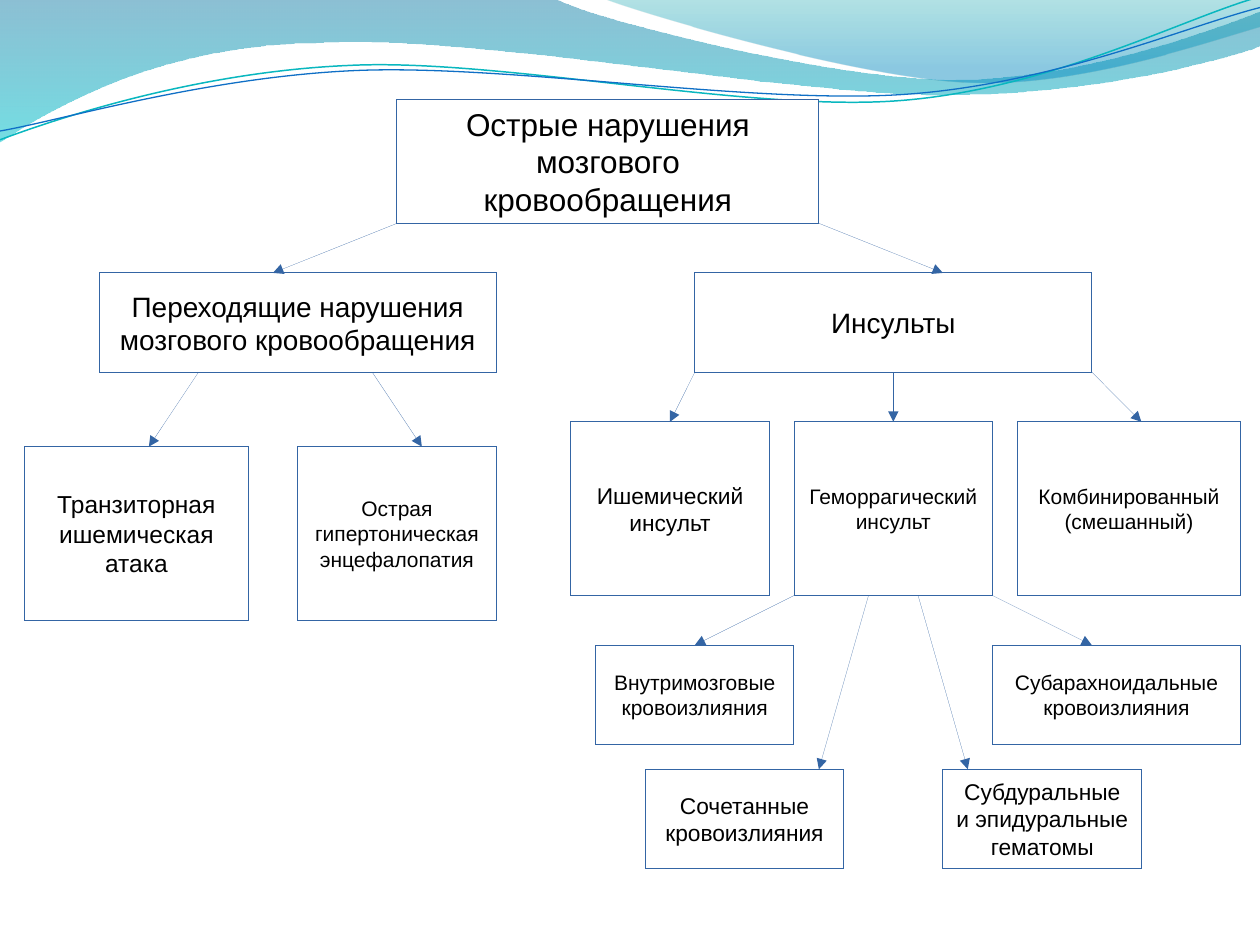
"""Build a slide with a tree chart of acute disorders of cerebral circulation."""
from lxml.etree import SubElement
from pptx import Presentation
from pptx.dml.color import RGBColor
from pptx.enum.shapes import MSO_CONNECTOR, MSO_SHAPE
from pptx.enum.text import MSO_ANCHOR, PP_ALIGN
from pptx.oxml.ns import qn
from pptx.util import Pt

WHITE = RGBColor(0xFF, 0xFF, 0xFF)
BLACK = RGBColor(0x00, 0x00, 0x00)
EDGE = RGBColor(0x34, 0x65, 0xA4)
TEAL_LINE = RGBColor(0x09, 0xB7, 0xBF)
BLUE_LINE = RGBColor(0x0F, 0x6F, 0xC6)
DEEP_BLUE = RGBColor(0x00, 0x74, 0xA0)
CYAN = RGBColor(0x00, 0xC4, 0xCD)
SKY = RGBColor(0x00, 0x8A, 0xBF)
TEAL = RGBColor(0x00, 0xA0, 0xA8)

INCH = 72
GRID = 14.18

BOXES = {
    "root": ("Острые нарушения мозгового кровообращения", 18, 16, 4, 17, 5),
    "transient": ("Переходящие нарушения мозгового кровообращения", 16, 4, 11, 16, 4),
    "tia": ("Транзиторная ишемическая атака", 14, 1, 18, 9, 7),
    "strokes": ("Инсульты", 16, 28, 11, 16, 4),
    "enceph": ("Острая гипертоническая энцефалопатия", 12, 12, 18, 8, 7),
    "hemorrhagic": ("Геморрагический инсульт", 12, 32, 17, 8, 7),
    "combined": ("Комбинированный (смешанный)", 12, 41, 17, 9, 7),
    "ischemic": ("Ишемический инсульт", 13, 23, 17, 8, 7),
    "intracerebral": ("Внутримозговые кровоизлияния", 12, 24, 26, 8, 4),
    "mixed": ("Сочетанные кровоизлияния", 13, 26, 31, 8, 4),
    "subarachnoid": ("Субарахноидальные кровоизлияния", 12, 40, 26, 10, 4),
    "subdural": ("Субдуральные и эпидуральные гематомы", 13, 38, 31, 8, 4),
}
ARROWS = [
    ("root", 16, "transient", 11), ("root", 33, "strokes", 38),
    ("transient", 8, "tia", 6), ("transient", 15, "enceph", 17),
    ("strokes", 28, "ischemic", 27), ("strokes", 36, "hemorrhagic", 36),
    ("strokes", 44, "combined", 46), ("hemorrhagic", 32, "intracerebral", 28),
    ("hemorrhagic", 35, "mixed", 33), ("hemorrhagic", 40, "subarachnoid", 44),
    ("hemorrhagic", 37, "subdural", 39),
]
BANDS = [
    ([(0, 0), (4.4, -0.01), (4.76, 0.17, 6.64, 0.63, 7.58, 0.63),
      (8.53, 0.63, 9.58, 0.26, 10, 0.09), (10.01, 0.36),
      (9.83, 0.44, 8.7, 0.76, 7.46, 0.75), (6.22, 0.75, 3.82, 0.28, 2.57, 0.34),
      (1.29, 0.35, 0.46, 0.83, -0.01, 1.13)],
     [(0, DEEP_BLUE, 45), (1, CYAN, 55)], 270),
    ([(4.79, -0.01), (5.09, 0.11, 6.82, 0.62, 7.69, 0.65),
      (8.56, 0.69, 9.61, 0.32, 10, 0.21), (10, 0)],
     [(0.2, SKY, 45), (1, TEAL, 30)], 90),
]
WAVES = [
    ([(0, 1.11), (0.48, 0.93, 1.58, 0.57, 2.77, 0.52),
      (3.95, 0.46, 5.93, 0.89, 7.13, 0.8), (8.33, 0.71, 9.38, 0.15, 9.98, -0.02)],
     TEAL_LINE, 0.85),
    ([(0, 1.04), (0.47, 0.96, 1.64, 0.61, 2.83, 0.56),
      (4.03, 0.51, 5.97, 0.83, 7.17, 0.75), (8.36, 0.67, 9.41, 0.21, 10, 0.06)],
     BLUE_LINE, 0.75),
]


def add_outline(s, segments, close):
    lengths = [[Pt(v * INCH) for v in seg] for seg in segments]
    builder = s.shapes.build_freeform(*lengths[0])
    builder.add_line_segments([seg[-2:] for seg in lengths[1:]], close=close)
    sp = builder.convert_to_shape()
    sp.shadow.inherit = False
    for edge, seg in zip(list(sp.element.iter(qn("a:lnTo"))), lengths[1:]):
        if len(seg) == 6:
            curve = SubElement(edge.getparent(), qn("a:cubicBezTo"))
            for x, y in zip(seg[::2], seg[1::2]):
                pt = SubElement(curve, qn("a:pt"))
                pt.set("x", str(x - sp.left))
                pt.set("y", str(y - sp.top))
            edge.getparent().replace(edge, curve)
    return sp


def add_band(s, segments, stops, angle):
    sp = add_outline(s, segments, True)
    sp.line.fill.background()
    sp.fill.gradient()
    sp.fill.gradient_angle = angle
    for stop, (position, color, _) in zip(sp.fill.gradient_stops, stops):
        stop.position = position
        stop.color.rgb = color
    for clr, (_, _, alpha) in zip(sp.element.spPr.iter(qn("a:srgbClr")), stops):
        SubElement(clr, qn("a:alpha")).set("val", str(alpha * 1000))


def add_wave(s, segments, color, width):
    sp = add_outline(s, segments, False)
    sp.fill.background()
    sp.line.color.rgb = color
    sp.line.width = Pt(width)


def set_hairline(sp):
    sp.line.color.rgb = EDGE
    ln = sp.element.spPr.find(qn("a:ln"))
    ln.set("w", "0")
    return ln


def add_box(s, text, size, *place):
    sp = s.shapes.add_shape(MSO_SHAPE.RECTANGLE, *(Pt(v * GRID) for v in place))
    sp.shadow.inherit = False
    sp.fill.solid()
    sp.fill.fore_color.rgb = WHITE
    set_hairline(sp)
    tf = sp.text_frame
    tf.word_wrap = True
    tf.vertical_anchor = MSO_ANCHOR.MIDDLE
    p = tf.paragraphs[0]
    p.alignment = PP_ALIGN.CENTER
    r = p.add_run()
    r.text = text
    r.font.size = Pt(size)
    r.font.name = "Arial"
    r.font.color.rgb = BLACK


def add_arrow(s, parent, x1, child, x2):
    _, _, _, top, _, height = BOXES[parent]
    ends = (x1, top + height, x2, BOXES[child][3])
    line = s.shapes.add_connector(MSO_CONNECTOR.STRAIGHT, *(Pt(v * GRID) for v in ends))
    SubElement(set_hairline(line), qn("a:tailEnd")).set("type", "triangle")
    SubElement(line.element.spPr, qn("a:effectLst"))


def main():
    prs = Presentation()
    prs.slide_width, prs.slide_height = Pt(720), Pt(540)
    s = prs.slides.add_slide(prs.slide_layouts[6])
    for band in BANDS:
        add_band(s, *band)
    for wave in WAVES:
        add_wave(s, *wave)
    for box in BOXES.values():
        add_box(s, *box)
    for arrow in ARROWS:
        add_arrow(s, *arrow)
    prs.save("out.pptx")


if __name__ == "__main__":
    main()
